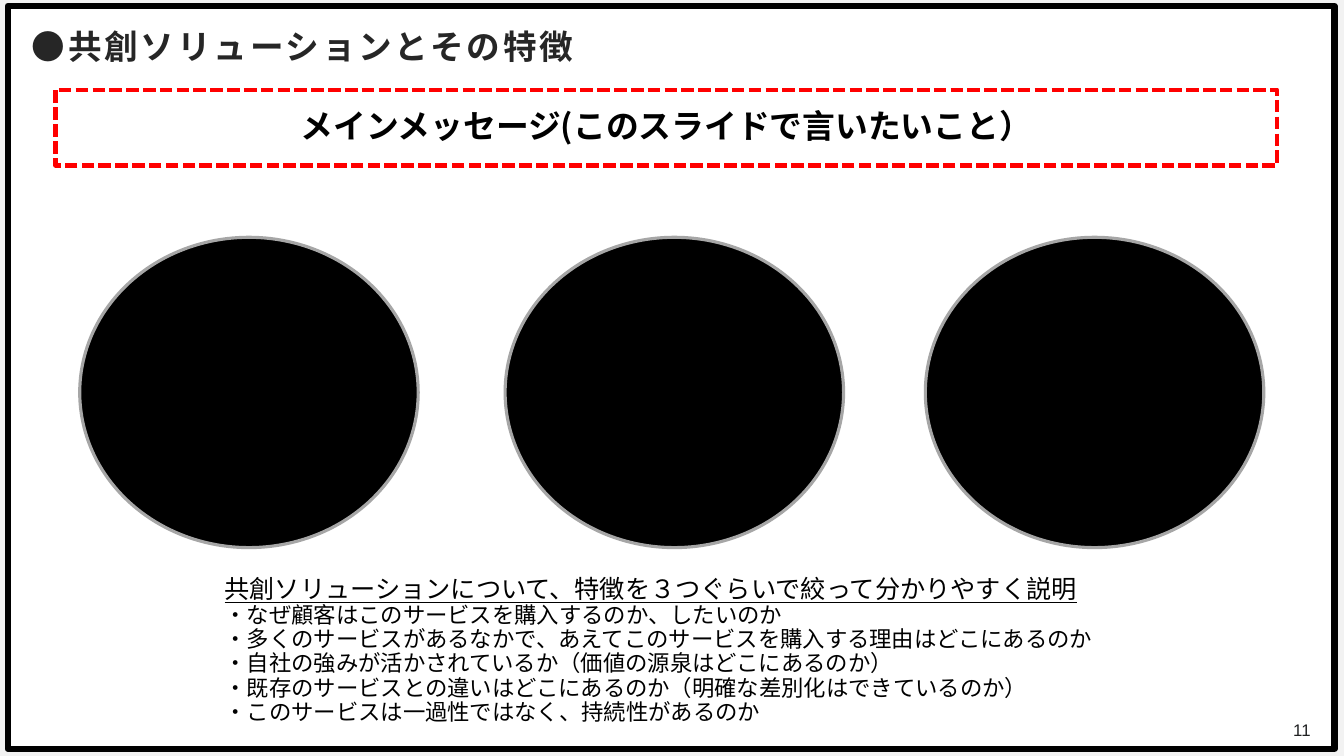
from pptx import Presentation
from pptx.dml.color import RGBColor
from pptx.enum import dml, shapes, text
from pptx.oxml import ns
from pptx.util import Cm, Pt

JAPANESE = "Noto Sans CJK JP"


def paint(target, color):
    """Give a fill, or the fill of a line, one solid colour."""
    target.solid()
    target.fore_color.rgb = RGBColor.from_string(color)


def write(box, lines, inset=(0.25, 0.13), spacing=0.9, align=text.PP_ALIGN.LEFT,
          color="000000", font=JAPANESE, **style):
    """Fill a shape with (text, format) lines that share one style."""
    frame = box.text_frame
    frame.word_wrap = True
    frame.vertical_anchor = text.MSO_ANCHOR.MIDDLE
    frame.margin_left = frame.margin_right = Cm(inset[0])
    frame.margin_top = frame.margin_bottom = Cm(inset[1])
    for index, (words, line_style) in enumerate(lines):
        para = frame.add_paragraph() if index else frame.paragraphs[0]
        para.alignment, para.line_spacing = align, spacing
        span = para.add_run()
        span.text = words
        for name, value in {"name": font, **style, **line_style}.items():
            setattr(span.font, name, value)
        paint(span.font.fill, color)
        east_asian = span.font._element.makeelement(ns.qn("a:ea"), {"typeface": font})
        span.font._element.append(east_asian)


deck = Presentation()
deck.slide_width, deck.slide_height = Cm(33.87), Cm(19.05)
page = deck.slides.add_slide(deck.slide_layouts[6])
paint(page.background.fill, "F2F2F2")

# Outlined shapes: kind, place, fill, line colour, line width
RECTANGLE, OVAL = shapes.MSO_SHAPE.RECTANGLE, shapes.MSO_SHAPE.OVAL
outlined = [(RECTANGLE, (0.2, 0.15, 33.43, 18.72), "FFFFFF", "000000", 4.5)]
outlined += [(OVAL, (left, 5.98, 8.53, 7.82), "000000", "A6A6A6", 2.25)
             for left in (2.01, 12.73, 23.32)]
outlined.append((RECTANGLE, (1.4, 2.26, 30.78, 1.91), None, "FF0000", 3))
for kind, place, fill, line, width in outlined:
    shape = page.shapes.add_shape(kind, *map(Cm, place))
    shape.shadow.inherit = False
    if fill:
        paint(shape.fill, fill)
    else:
        shape.fill.background()
    paint(shape.line.fill, line)
    shape.line.width = Pt(width)

message = shape
message.line.dash_style = dml.MSO_LINE.SQUARE_DOT
write(message, [("メインメッセージ(このスライドで言いたいこと）", {})],
      align=text.PP_ALIGN.CENTER, size=Pt(23.4), bold=True)

title = page.shapes.add_textbox(Cm(0.3), Cm(0.28), Cm(20.93), Cm(1.88))
write(title, [("●共創ソリューションとその特徴", {})], inset=(0.5, 0.5),
      color="262626", size=Pt(24), bold=True)
title.text_frame.paragraphs[0].runs[0].font._element.set("spc", "200")

points = [
    "・なぜ顧客はこのサービスを購入するのか、したいのか",
    "・多くのサービスがあるなかで、あえてこのサービスを購入する理由はどこにあるのか",
    "・自社の強みが活かされているか（価値の源泉はどこにあるのか）",
    "・既存のサービスとの違いはどこにあるのか（明確な差別化はできているのか）",
    "・このサービスは一過性ではなく、持続性があるのか",
]
heading = ("共創ソリューションについて、特徴を３つぐらいで絞って分かりやすく説明",
           {"size": Pt(18), "underline": True})
explanation = page.shapes.add_textbox(Cm(5.41), Cm(14.55), Cm(26.42), Cm(3.71))
write(explanation, [heading] + [(point, {}) for point in points],
      inset=(0.25, 0), size=Pt(16))

number = page.shapes.add_textbox(Cm(31.17), Cm(18.19), Cm(2.11), Cm(0.38))
write(number, [("11", {})], spacing=1.0, align=text.PP_ALIGN.RIGHT,
      color="1F2021", font="Arial", size=Pt(12))

deck.save("out.pptx")
